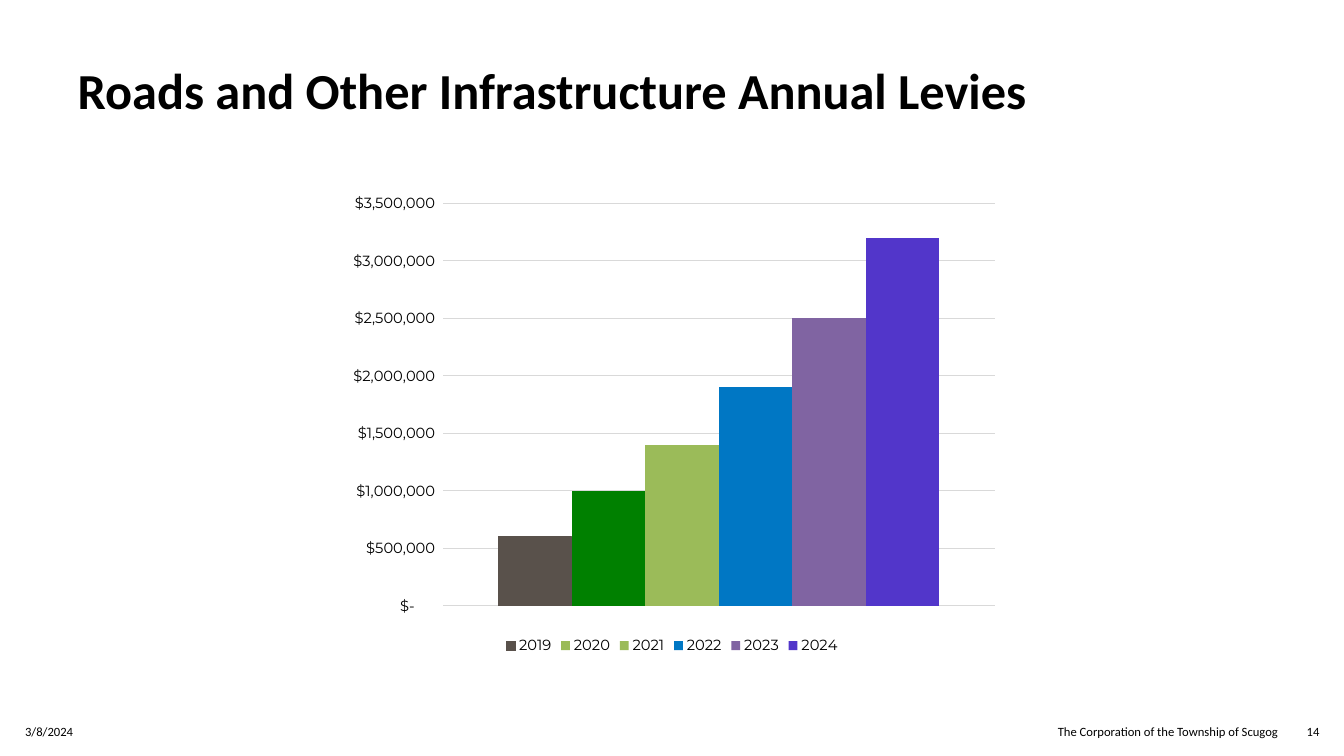
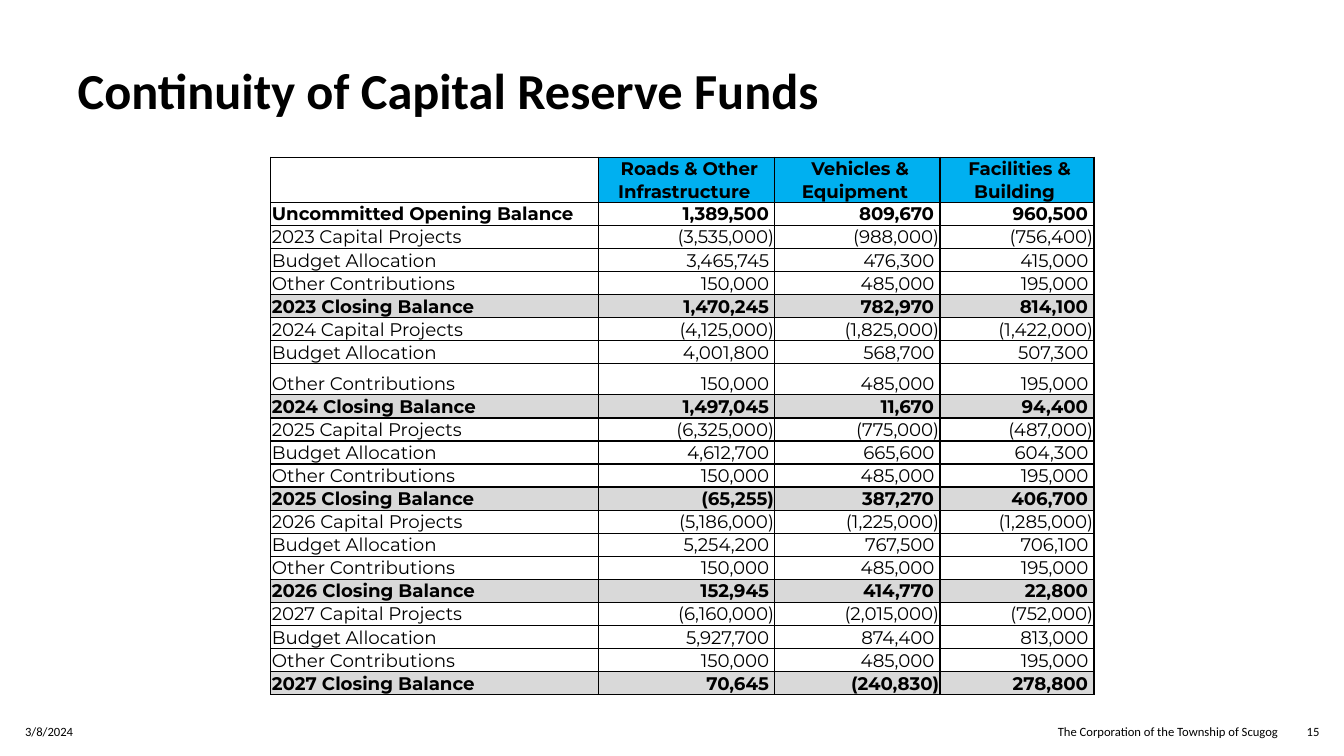
"""Builds two slides on annual infrastructure levies and capital reserve funds."""
from lxml.etree import SubElement
from pptx import Presentation
from pptx.chart.data import CategoryChartData
from pptx.dml.color import RGBColor
from pptx.enum.chart import XL_CHART_TYPE, XL_LEGEND_POSITION, XL_TICK_MARK
from pptx.enum.text import MSO_ANCHOR, PP_ALIGN
from pptx.oxml.ns import qn
from pptx.util import Pt

COLORS = {
    "text": "000000", "grid": "D9D9D9", "header": "00B0F0", "closing": "D9D9D9",
    "brown": "59514B", "green": "008000", "lime": "9BBB59",
    "blue": "0077C4", "purple": "8064A2", "violet": "5236CA",
}


def style_font(font, name, size, bold=False):
    font.name = name
    font.size = Pt(size)
    font.bold = bold
    font.color.rgb = RGBColor.from_string(COLORS["text"])


def add_text(page, text, left, top, width, height, size=9, bold=False,
             align=PP_ALIGN.LEFT, anchor=MSO_ANCHOR.MIDDLE, spacing=1.0):
    box = page.shapes.add_textbox(Pt(left), Pt(top), Pt(width), Pt(height))
    frame = box.text_frame
    frame.word_wrap = True
    frame.vertical_anchor = anchor
    frame.text = text
    para = frame.paragraphs[0]
    para.alignment = align
    para.line_spacing = spacing
    style_font(para.runs[0].font, "Calibri", size, bold)


deck = Presentation()
deck.slide_width = Pt(960)
deck.slide_height = Pt(540)

titles = ["Roads and Other Infrastructure Annual Levies", "Continuity of Capital Reserve Funds"]
pages = []
for number, title in enumerate(titles, start=14):
    page = deck.slides.add_slide(deck.slide_layouts[6])
    add_text(page, title, 48.4, 43.7, 839, 89, size=36, bold=True,
             anchor=MSO_ANCHOR.TOP, spacing=0.9)
    add_text(page, "3/8/2024", 10.8, 508.3, 275, 28.8)
    add_text(page, "The Corporation of the Township of Scugog", 699, 508.3, 220.8, 28.8,
             align=PP_ALIGN.RIGHT)
    add_text(page, str(number), 916, 508.3, 33.6, 28.8, align=PP_ALIGN.RIGHT)
    pages.append(page)
levies_page, reserves_page = pages

levies = [
    ("2019", 600000, "brown"), ("2020", 1000000, "lime"), ("2021", 1400000, "lime"),
    ("2022", 1900000, "blue"), ("2023", 2500000, "purple"), ("2024", 3200000, "violet"),
]
chart_data = CategoryChartData()
chart_data.categories = ["1"]
for year, levy, color in levies:
    chart_data.add_series(year, [levy])
chart = levies_page.shapes.add_chart(
    XL_CHART_TYPE.COLUMN_CLUSTERED, Pt(240), Pt(131.8), Pt(480), Pt(339), chart_data).chart
style_font(chart.font, "Montserrat", 10.5)
chart.has_title = False
chart.has_legend = True
chart.legend.position = XL_LEGEND_POSITION.BOTTOM
chart.legend.include_in_layout = False
style_font(chart.legend.font, "Montserrat", 10.5)
chart.category_axis.visible = False

value_axis = chart.value_axis
value_axis.minimum_scale = 0
value_axis.maximum_scale = 3500000
value_axis.major_unit = 500000
value_axis.major_tick_mark = XL_TICK_MARK.NONE
value_axis.minor_tick_mark = XL_TICK_MARK.NONE
value_axis.format.line.fill.background()
value_axis.major_gridlines.format.line.color.rgb = RGBColor.from_string(COLORS["grid"])
value_axis.major_gridlines.format.line.width = Pt(0.75)
value_axis.tick_labels.number_format = (
    r'_("$"* #,##0_);_("$"* \(#,##0\);_("$"* "-"??_);_(@_)')
value_axis.tick_labels.number_format_is_linked = False
style_font(value_axis.tick_labels.font, "Montserrat", 10.5)

plot = chart.plots[0]
plot.gap_width = 150
plot.overlap = 0
plot.vary_by_categories = False
for series, (year, levy, color) in zip(plot.series, levies):
    series.format.fill.solid()
    series.format.fill.fore_color.rgb = RGBColor.from_string(COLORS[color])
first_line = plot.series[0].format.line
first_line.color.rgb = RGBColor.from_string(COLORS["brown"])
first_line.width = Pt(0.75)
column_2020 = plot.series[1].points[0].format.fill
column_2020.solid()
column_2020.fore_color.rgb = RGBColor.from_string(COLORS["green"])

balance = [1389500, 809670, 960500]
contributions = [150000, 485000, 195000]
activity = {
    2023: ([-3535000, -988000, -756400], [3465745, 476300, 415000]),
    2024: ([-4125000, -1825000, -1422000], [4001800, 568700, 507300]),
    2025: ([-6325000, -775000, -487000], [4612700, 665600, 604300]),
    2026: ([-5186000, -1225000, -1285000], [5254200, 767500, 706100]),
    2027: ([-6160000, -2015000, -752000], [5927700, 874400, 813000]),
}
lines = [("Uncommitted Opening Balance", balance)]
for year, (projects, allocation) in activity.items():
    balance = [sum(parts) for parts in zip(balance, projects, allocation, contributions)]
    lines += [
        (f"{year} Capital Projects", projects),
        ("Budget Allocation", allocation),
        ("Other Contributions", contributions),
        (f"{year} Closing Balance", balance),
    ]
rows = [["", " Roads & Other Infrastructure ", " Vehicles & Equipment ", " Facilities & Building "]]
for label, amounts in lines:
    rows.append([label] + [f"({-amount:,})" if amount < 0 else f"{amount:,} "
                           for amount in amounts])

column_widths = [234, 126, 118, 110]
row_heights = [32.2] + [16.48] * (len(rows) - 1)
row_heights[8] = 22.3
table = reserves_page.shapes.add_table(
    len(rows), len(column_widths), Pt(193.5), Pt(112.3),
    Pt(sum(column_widths)), Pt(sum(row_heights))).table
table.first_row = False
table.horz_banding = False
for column, width in zip(table.columns, column_widths):
    column.width = Pt(width)
for row_index, (texts, height) in enumerate(zip(rows, row_heights)):
    table.rows[row_index].height = Pt(height)
    is_header = row_index == 0
    is_closing = texts[0].endswith("Closing Balance")
    for column_index, text in enumerate(texts):
        cell = table.cell(row_index, column_index)
        cell.margin_left = cell.margin_right = cell.margin_top = Pt(0.72)
        cell.margin_bottom = Pt(0)
        cell.vertical_anchor = MSO_ANCHOR.BOTTOM
        cell.text_frame.text = text
        para = cell.text_frame.paragraphs[0]
        if is_header:
            para.alignment = PP_ALIGN.CENTER
        elif column_index > 0:
            para.alignment = PP_ALIGN.RIGHT
        style_font(para.font, "Montserrat", 13)
        for span in para.runs:
            style_font(span.font, "Montserrat", 13, is_closing or row_index < 2)
        properties = cell._tc.get_or_add_tcPr()
        for side in ("a:lnL", "a:lnR", "a:lnT", "a:lnB"):
            border = SubElement(properties, qn(side), w=str(Pt(1)))
            border_fill = SubElement(border, qn("a:solidFill"))
            SubElement(border_fill, qn("a:srgbClr"), val=COLORS["text"])
        if is_closing or (is_header and column_index > 0):
            cell.fill.solid()
            cell.fill.fore_color.rgb = RGBColor.from_string(
                COLORS["closing" if is_closing else "header"])
        else:
            cell.fill.background()

deck.save("out.pptx")
